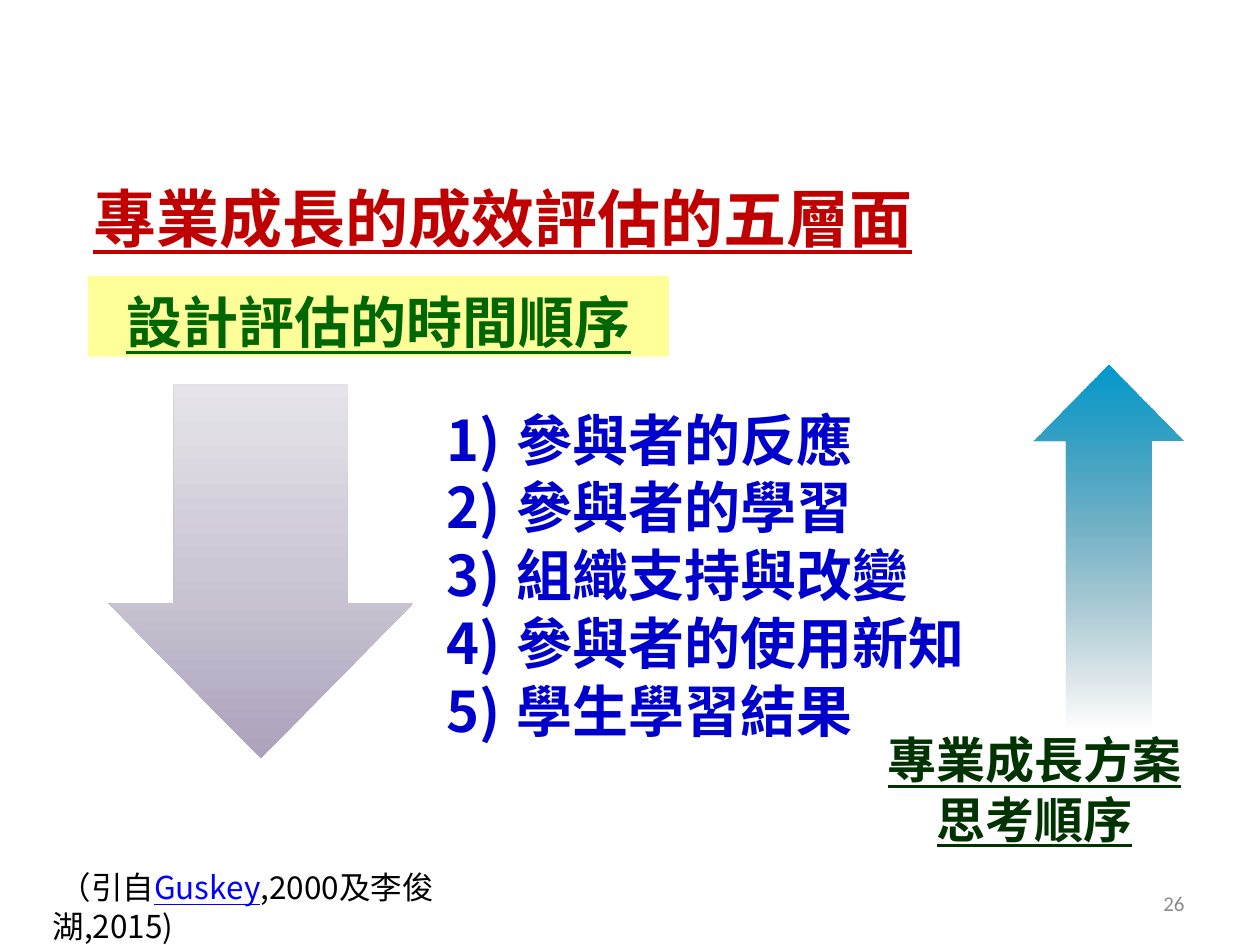
from lxml import etree
from pptx import Presentation
from pptx.dml.color import RGBColor
from pptx.enum.shapes import MSO_SHAPE as Shape
from pptx.enum.text import MSO_ANCHOR as Anchor, MSO_AUTO_SIZE as AutoSize, PP_ALIGN as Align
from pptx.oxml.ns import qn
from pptx.util import Inches, Pt

CJK_FONT = "Noto Sans CJK SC"
LINE_RATIO = 1.21


def color(hex_string):
    return RGBColor.from_string(hex_string)


class SlideBuilder:
    def __init__(self, page, font=CJK_FONT):
        self.page = page
        self.font = font

    def place(self, item, area):
        item.left, item.top, item.width, item.height = map(Inches, area)
        return item

    def text_box(self, area):
        return self.page.shapes.add_textbox(*map(Inches, area))

    def fill_text(self, box, lines, size, align=Align.LEFT, anchor=Anchor.TOP,
                  font=None, bold=False):
        """Fill box; each line is a list of (text, colour, underlined) runs."""
        frame = box.text_frame
        frame.word_wrap = True
        frame.auto_size = AutoSize.NONE
        frame.vertical_anchor = anchor
        frame.margin_top = Inches(0.09)
        for index, runs in enumerate(lines):
            para = frame.add_paragraph() if index else frame.paragraphs[0]
            para.alignment = align
            para.space_before = Pt(0)
            para.line_spacing = Pt(size * LINE_RATIO)
            for text, hue, underlined in runs:
                span = para.add_run()
                span.text = text
                span.font.size = Pt(size)
                span.font.bold = bold
                span.font.underline = underlined
                span.font.color.rgb = color(hue)
                span.font.name = font or self.font
                east_asian = etree.SubElement(span.font._element, qn("a:ea"))
                east_asian.set("typeface", font or self.font)
        return frame

    def title(self, area, text, size, hue):
        box = self.place(self.page.shapes.title, area)
        self.fill_text(box, [[(text, hue, True)]], size, Align.CENTER, bold=True)

    def numbered_list(self, area, items, size, hue, indent):
        box = self.place(self.page.placeholders[1], area)
        lines = [[(item, hue, False)] for item in items]
        for para in self.fill_text(box, lines, size, bold=True).paragraphs:
            props = para._p.get_or_add_pPr()
            props.set("marL", str(Inches(indent)))
            props.set("indent", str(-Inches(indent)))
            etree.SubElement(props, qn("a:buFont")).set("typeface", "+mj-lt")
            etree.SubElement(props, qn("a:buAutoNum")).set("type", "arabicParenR")

    def shape(self, kind, area):
        item = self.page.shapes.add_shape(kind, *map(Inches, area))
        item.shadow.inherit = False
        item.line.fill.background()
        return item

    def label(self, area, text, size, hue, fill):
        box = self.shape(Shape.RECTANGLE, area)
        box.fill.solid()
        box.fill.fore_color.rgb = color(fill)
        self.fill_text(box, [[(text, hue, True)]], size, Align.CENTER, bold=True)

    def arrow(self, area, stops, rotation=0):
        """Draw an up arrow; each stop is (percent, colour, opacity percent)."""
        item = self.shape(Shape.UP_ARROW, area)
        item.rotation = rotation
        item.adjustments[0] = 0.57
        item.adjustments[1] = 0.51
        item.fill.gradient()
        item.fill.gradient_angle = 270
        stop_list = item._element.spPr.find(qn("a:gradFill")).find(qn("a:gsLst"))
        for old_stop in list(stop_list):
            stop_list.remove(old_stop)
        for percent, hue, opacity in stops:
            stop = etree.SubElement(stop_list, qn("a:gs"), pos=str(percent * 1000))
            tint = etree.SubElement(stop, qn("a:srgbClr"), val=hue)
            if opacity < 100:
                etree.SubElement(tint, qn("a:alpha"), val=str(opacity * 1000))


def main():
    deck = Presentation()
    deck.slide_width, deck.slide_height = Inches(10), Inches(7.5)
    builder = SlideBuilder(deck.slides.add_slide(deck.slide_layouts[1]))

    builder.numbered_list(
        (3.44, 3.12, 4.38, 2.79),
        ["參與者的反應", "參與者的學習", "組織支持與改變", "參與者的使用新知", "學生學習結果"],
        32, "0000CC", indent=0.56)
    builder.title((0.55, 1.33, 6.88, 0.71), "專業成長的成效評估的五層面", 36, "C00000")
    builder.label((0.7, 2.19, 4.61, 0.64), "設計評估的時間順序", 32, "006600", "FFFF99")

    thinking_order = [[(text, "003300", True)] for text in ("專業成長方案", "思考順序")]
    builder.fill_text(builder.text_box((6.64, 5.7, 3.14, 1.04)), thinking_order, 28,
                      Align.CENTER, bold=True)

    builder.arrow((8.2, 2.89, 1.19, 2.89), [(0, "0099CC", 100), (100, "00475E", 0)])
    builder.arrow((0.86, 3.05, 2.42, 2.97),
                  [(0, "ACA2BB", 100), (50, "CCC7D4", 100), (100, "E6E4EA", 100)],
                  rotation=180)

    citation = [(" （引自", "000000", False), ("Guskey", "0000FF", True),
                (",2000及李俊湖,2015)", "000000", False)]
    frame = builder.fill_text(builder.text_box((0.32, 6.8, 4.24, 0.4)), [citation], 18)
    frame.margin_right = Inches(0.91)

    builder.fill_text(builder.text_box((7.17, 6.95, 2.33, 0.4)),
                      [[("26", "8C8C8C", False)]],
                      12, Align.RIGHT, Anchor.MIDDLE, font="Calibri")
    deck.save("out.pptx")


if __name__ == "__main__":
    main()
